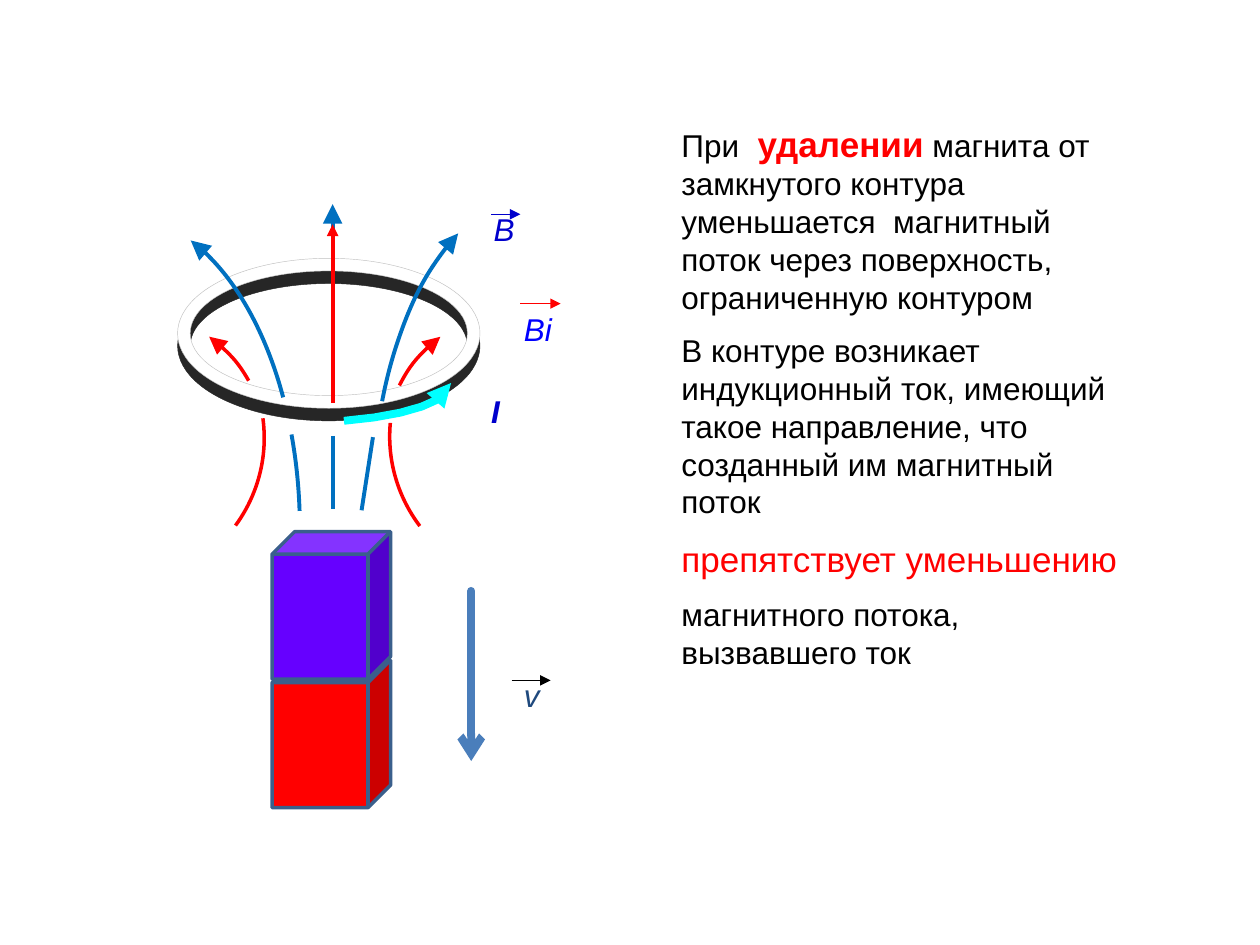
from dataclasses import dataclass

from lxml import etree
from pptx import Presentation
from pptx.dml.color import RGBColor
from pptx.enum.shapes import MSO_CONNECTOR, MSO_SHAPE
from pptx.enum.text import MSO_AUTO_SIZE
from pptx.oxml.ns import qn
from pptx.util import Inches, Pt

STRAIGHT = MSO_CONNECTOR.STRAIGHT
ARC, CUBE, DONUT = MSO_SHAPE.ARC, MSO_SHAPE.CUBE, MSO_SHAPE.DONUT
GROW = MSO_AUTO_SIZE.SHAPE_TO_FIT_TEXT
COLORS = {
    "black": "000000", "white": "FFFFFF", "red": "FF0000", "field": "0070C0",
    "violet": "6600FF", "edge": "3A5F8C", "velocity": "4A7EBB", "cyan": "00FFFF",
    "navy": "0000CC", "blue": "0000FF", "slate": "1F497D", "rim": "262626",
    "gray": "BFBFBF",
}
FONT = "Arial"
CURVE_STEPS = 6


@dataclass
class Arc:
    left: float
    top: float
    width: float
    height: float
    start: float
    end: float
    color: str
    weight: float
    rotation: float = 0
    flipped: bool = False
    head: str = ""


@dataclass
class Line:
    start: tuple[float, float]
    end: tuple[float, float]
    color: str
    weight: float
    tail: str = ""
    tail_size: str = "med"
    cap: str = "flat"


@dataclass
class Run:
    text: str
    size: int = 18
    color: str = "black"
    bold: bool = False
    italic: bool = False


@dataclass
class TextBox:
    left: float
    top: float
    width: float
    height: float
    paragraphs: list[list[Run]]
    wrap: bool = True
    spaced: bool = False


@dataclass
class Magnet:
    top: float
    color: str


@dataclass
class Ring:
    left: float
    top: float
    width: float
    height: float
    thickness: float


@dataclass
class Curve:
    points: list[tuple[float, float]]
    color: str
    weight: float


EXPLANATION = [
    [
        Run("При "), Run(" ", 20), Run("удалении", 20, "red", True),
        Run(" магнита от замкнутого контура уменьшается  магнитный поток "
            "через поверхность, ограниченную контуром"),
    ],
    [Run("В контуре возникает индукционный ток, имеющий такое направление, "
         "что созданный им магнитный поток")],
    [Run("препятствует уменьшению", 20, "red")],
    [Run("магнитного потока, вызвавшего ток")],
]
ELEMENTS = [
    TextBox(5.31, 0.92, 3.7, 4.99, EXPLANATION, spaced=True),
    Ring(1.41, 2.05, 2.4, 1.19, 0.1),
    Magnet(5.24, "red"),
    Magnet(4.22, "violet"),
    Line((3.74, 4.69), (3.74, 6.04), "velocity", 4.5, "arrow", cap="rnd"),
    Arc(2.96, 1.47, 2.89, 5, 173.97, 198.13, "field", 2.25, flipped=True, head="triangle"),
    Line((2.96, 3.47), (2.87, 4.05), "field", 2.25),
    Line((2.64, 3.12), (2.64, 1.62), "field", 2.25, "triangle", "lg"),
    Line((2.64, 3.46), (2.64, 4.04), "field", 2.25),
    Arc(-0.51, 1.7, 2.89, 5, 170.51, 192.87, "field", 2.25, head="triangle"),
    Arc(-0.51, 1.7, 2.89, 5, 198.85, 212.57, "field", 2.25),
    Arc(-0.17, 2.45, 2.29, 2.33, 162.84, 176.82, "red", 2, 34.6, head="triangle"),
    Arc(-0.2, 2.33, 2.29, 2.33, 189.05, 0, "red", 2, 36.2),
    Arc(3.05, 2.44, 2.29, 2.33, 162.84, 177.89, "red", 2, 324.5, True, "triangle"),
    Arc(3.1, 2.32, 2.29, 2.33, 189.92, 0, "red", 2, 322.9, True),
    TextBox(3.82, 1.62, 0.37, 0.4, [[Run("B", color="navy", italic=True)]], False),
    Line((3.9, 1.7), (4.13, 1.7), "navy", 0.75, "triangle"),
    TextBox(4.06, 2.41, 0.47, 0.4, [[Run("Bi", color="blue", italic=True)]]),
    Line((4.13, 2.41), (4.45, 2.41), "red", 0.75, "triangle"),
    Curve([(2.73, 3.34), (3.24, 3.3), (3.58, 3.18), (3.58, 3.04)], "cyan", 4.5),
    TextBox(4.06, 5.32, 0.4, 0.4, [[Run("v", color="slate", italic=True)]]),
    Line((4.06, 5.4), (4.37, 5.4), "black", 0.75, "triangle"),
    Line((2.64, 3.2), (2.64, 1.78), "red", 2.25, "triangle"),
    TextBox(3.8, 3.06, 0.27, 0.4, [[Run("I", color="navy", bold=True, italic=True)]], False),
]


def rgb(name: str) -> RGBColor:
    return RGBColor.from_string(COLORS[name])


def style_line(shape, color: str, weight: float, head: str = "", tail: str = "",
               size: str = "med", cap: str = "flat") -> None:
    shape.line.color.rgb = rgb(color)
    shape.line.width = Pt(weight)
    outline = shape.element.spPr.find(qn("a:ln"))
    outline.set("cap", cap)
    for tag, kind in (("a:headEnd", head), ("a:tailEnd", tail)):
        if kind:
            etree.SubElement(outline, qn(tag), type=kind, w=size, len=size)


def add_preset(slide, preset, left: float, top: float, width: float, height: float):
    shape = slide.shapes.add_shape(
        preset, Inches(left), Inches(top), Inches(width), Inches(height))
    shape.shadow.inherit = False
    return shape


def fill_solid(shape, color: str) -> None:
    shape.fill.solid()
    shape.fill.fore_color.rgb = rgb(color)


def draw_arc(slide, arc: Arc) -> None:
    shape = add_preset(slide, ARC, arc.left, arc.top, arc.width, arc.height)
    shape.adjustments[0], shape.adjustments[1] = arc.start, arc.end
    shape.rotation = arc.rotation
    if arc.flipped:
        shape.element.spPr.find(qn("a:xfrm")).set("flipH", "1")
    shape.fill.background()
    style_line(shape, arc.color, arc.weight, head=arc.head, size="lg")


def draw_line(slide, line: Line) -> None:
    connector = slide.shapes.add_connector(
        STRAIGHT, *(Inches(value) for value in line.start + line.end))
    style_line(connector, line.color, line.weight, tail=line.tail,
               size=line.tail_size, cap=line.cap)
    etree.SubElement(connector.element.spPr, qn("a:effectLst"))


def draw_magnet(slide, magnet: Magnet) -> None:
    shape = add_preset(slide, CUBE, 2.16, magnet.top, 0.94, 1.17)
    shape.adjustments[0] = 0.19
    fill_solid(shape, magnet.color)
    style_line(shape, "edge", 2)


def draw_ring(slide, ring: Ring) -> None:
    shape = add_preset(slide, DONUT, ring.left, ring.top, ring.width, ring.height)
    shape.adjustments[0] = ring.thickness / ring.height
    fill_solid(shape, "white")
    style_line(shape, "gray", 0.25)
    effects = shape.element.spPr.find(qn("a:effectLst"))
    side = etree.SubElement(effects, qn("a:outerShdw"), blurRad="0",
                            dist=str(Inches(0.1)), dir="5400000", rotWithShape="0")
    etree.SubElement(side, qn("a:srgbClr"), val=COLORS["rim"])


def draw_curve(slide, curve: Curve) -> None:
    points = []
    for step in range(CURVE_STEPS + 1):
        t = step / CURVE_STEPS
        weights = ((1 - t) ** 3, 3 * t * (1 - t) ** 2, 3 * t * t * (1 - t), t ** 3)
        points.append(tuple(
            Inches(sum(weight * point[axis] for weight, point in zip(weights, curve.points)))
            for axis in (0, 1)))
    builder = slide.shapes.build_freeform(*points[0])
    builder.add_line_segments(points[1:], close=False)
    shape = builder.convert_to_shape()
    shape.shadow.inherit = False
    shape.fill.background()
    style_line(shape, curve.color, curve.weight, tail="triangle")


def add_run(paragraph, run: Run) -> None:
    text_run = paragraph.add_run()
    text_run.text = run.text
    formats = {"name": FONT, "size": Pt(run.size), "bold": run.bold, "italic": run.italic}
    for attribute, value in formats.items():
        setattr(text_run.font, attribute, value)
    text_run.font.color.rgb = rgb(run.color)


def draw_text(slide, box: TextBox) -> None:
    shape = slide.shapes.add_textbox(
        Inches(box.left), Inches(box.top), Inches(box.width), Inches(box.height))
    frame = shape.text_frame
    for attribute, value in {"word_wrap": box.wrap, "auto_size": GROW}.items():
        setattr(frame, attribute, value)
    for index, runs in enumerate(box.paragraphs):
        paragraph = frame.add_paragraph() if index else frame.paragraphs[0]
        if box.spaced:
            paragraph.space_before = Pt(runs[0].size / 2)
        for run in runs:
            add_run(paragraph, run)


DRAWERS = {Arc: draw_arc, Line: draw_line, Magnet: draw_magnet, Ring: draw_ring,
           Curve: draw_curve, TextBox: draw_text}


def main() -> None:
    presentation = Presentation()
    presentation.slide_width, presentation.slide_height = Inches(10), Inches(7.5)
    slide = presentation.slides.add_slide(presentation.slide_layouts[6])
    for element in ELEMENTS:
        DRAWERS[type(element)](slide, element)
    presentation.save("out.pptx")


if __name__ == "__main__":
    main()
